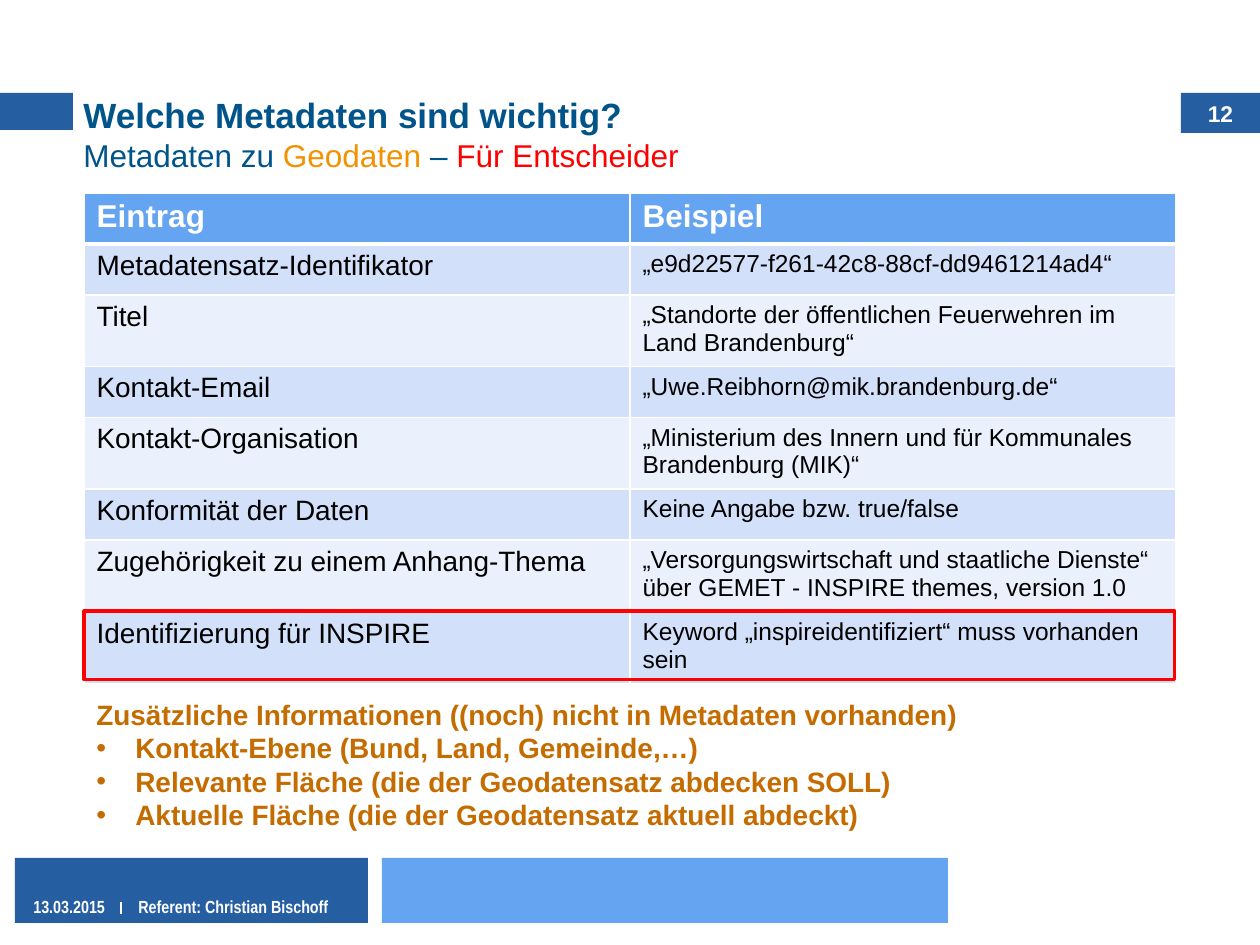
from lxml.etree import SubElement
from pptx import Presentation
from pptx.dml.color import RGBColor
from pptx.enum.shapes import MSO_CONNECTOR, MSO_SHAPE
from pptx.enum.text import MSO_ANCHOR, PP_ALIGN
from pptx.oxml.ns import qn
from pptx.util import Emu, Pt

PX = 914400 // 126
WHITE, BLACK, RED = "FFFFFF", "000000", "FF0000"
NAVY, SKY, TITLE_BLUE = "265EA2", "65A4F1", "00548A"
ORANGE, BROWN = "F39200", "C56C01"
BANDS = ("D3E0FA", "EAF0FC")

BARS = [
    ((382, 858, 566, 65), SKY),
    ((15, 858, 353, 65), NAVY),
    ((0, 93, 73, 37), NAVY),
]
PAGE_NUMBER = "12"
FOOTER = [("13.03.2015", 21, 252), ("Referent: Christian Bischoff", 126, 227)]

TITLE = [
    ("Welche Metadaten sind wichtig?", 20, True, TITLE_BLUE),
    ("\v", 20, True, TITLE_BLUE),
    ("Metadaten zu ", 18, False, TITLE_BLUE),
    ("Geodaten ", 18, False, ORANGE),
    ("– ", 18, False, TITLE_BLUE),
    ("Für Entscheider", 18, False, RED),
]
HEADER = ("Eintrag", "Beispiel")
ENTRIES = [
    ("Metadatensatz-Identifikator", "„e9d22577-f261-42c8-88cf-dd9461214ad4“"),
    ("Titel", "„Standorte der öffentlichen Feuerwehren im Land Brandenburg“"),
    ("Kontakt-Email", "„Uwe.Reibhorn@mik.brandenburg.de“"),
    ("Kontakt-Organisation",
     "„Ministerium des Innern und für Kommunales Brandenburg (MIK)“"),
    ("Konformität der Daten", "Keine Angabe bzw. true/false"),
    ("Zugehörigkeit zu einem Anhang-Thema",
     "„Versorgungswirtschaft und staatliche Dienste“ "
     "über GEMET - INSPIRE themes, version 1.0"),
    ("Identifizierung für INSPIRE",
     "Keyword „inspireidentifiziert“ muss vorhanden sein"),
]
ROW_HEIGHTS = [51, 51, 51, 51, 51, 51, 72, 51]
COLUMN_WIDTH = 546
EXTRA_HEADING = "Zusätzliche Informationen ((noch) nicht in Metadaten vorhanden)"
EXTRA_POINTS = [
    "Kontakt-Ebene (Bund, Land, Gemeinde,…)",
    "Relevante Fläche (die der Geodatensatz abdecken SOLL)",
    "Aktuelle Fläche (die der Geodatensatz aktuell abdeckt)",
]


def px(*lengths):
    return [Emu(length * PX) for length in lengths]


def color(value):
    return RGBColor.from_string(value)


def style(font, size, value, bold=False, name="Arial"):
    font.name, font.size, font.bold = name, Pt(size), bold
    font.color.rgb = color(value)


def add_rectangle(page, place, fill=None, line=None):
    box = page.shapes.add_shape(MSO_SHAPE.RECTANGLE, *px(*place))
    box.shadow.inherit = False
    if fill:
        box.fill.solid()
        box.fill.fore_color.rgb = color(fill)
    else:
        box.fill.background()
    if line:
        box.line.color.rgb = color(line)
        box.line.width = Pt(1.75)
    else:
        box.line.fill.background()
    return box


def add_text_box(page, place):
    frame = page.shapes.add_textbox(*px(*place)).text_frame
    frame.word_wrap = True
    return frame


def set_borders(cell, bottom_width):
    properties = cell._tc.get_or_add_tcPr()
    widths = {"a:lnL": 1, "a:lnR": 1, "a:lnT": 1, "a:lnB": bottom_width}
    for index, (tag, width) in enumerate(widths.items()):
        border = SubElement(properties, qn(tag), w=str(Pt(width)))
        properties.insert(index, border)
        fill = SubElement(border, qn("a:solidFill"))
        SubElement(fill, qn("a:srgbClr"), val=WHITE)


def add_bullet(paragraph):
    properties = paragraph._p.get_or_add_pPr()
    indent = px(39)[0]
    properties.set("marL", str(indent))
    properties.set("indent", str(-indent))
    bullet_color = SubElement(properties, qn("a:buClr"))
    SubElement(bullet_color, qn("a:srgbClr"), val=BROWN)
    SubElement(properties, qn("a:buFont"), typeface="Arial")
    SubElement(properties, qn("a:buChar"), char="•")


def add_frame(page):
    """Add the bars, the page number and the footer line."""
    for place, fill in BARS:
        add_rectangle(page, place, fill)
    number = add_rectangle(page, (1181, 93, 79, 40), NAVY).text_frame
    number.text = PAGE_NUMBER
    number.vertical_anchor = MSO_ANCHOR.MIDDLE
    number.paragraphs[0].alignment = PP_ALIGN.CENTER
    style(number.paragraphs[0].runs[0].font, 13, WHITE, True)
    for text, left, width in FOOTER:
        frame = add_text_box(page, (left, 890, width, 34))
        frame.text = text
        style(frame.paragraphs[0].runs[0].font, 10, WHITE, True, "Arial Narrow")
    divider = page.shapes.add_connector(
        MSO_CONNECTOR.STRAIGHT, *px(121, 902, 121, 914))
    divider.line.color.rgb = color(WHITE)
    divider.line.width = Pt(1)
    SubElement(divider._element.spPr, qn("a:effectLst"))


def add_title(page):
    frame = add_text_box(page, (71, 83, 1113, 101))
    frame.vertical_anchor = MSO_ANCHOR.MIDDLE
    paragraph = frame.paragraphs[0]
    for text, size, bold, value in TITLE:
        if text == "\v":
            paragraph.add_line_break()
            continue
        span = paragraph.add_run()
        span.text = text
        style(span.font, size, value, bold)


def add_entry_table(page):
    rows = [HEADER, *ENTRIES]
    table = page.shapes.add_table(
        len(rows), len(HEADER),
        *px(84, 193, COLUMN_WIDTH * len(HEADER), sum(ROW_HEIGHTS))).table
    for column in table.columns:
        column.width = px(COLUMN_WIDTH)[0]
    for r, texts in enumerate(rows):
        table.rows[r].height = px(ROW_HEIGHTS[r])[0]
        for c, text in enumerate(texts):
            cell = table.cell(r, c)
            cell.text = text
            cell.fill.solid()
            cell.fill.fore_color.rgb = color(BANDS[(r - 1) % 2] if r else SKY)
            set_borders(cell, 1 if r else 3)
            paragraph = cell.text_frame.paragraphs[0]
            paragraph.alignment = PP_ALIGN.LEFT
            font = paragraph.runs[0].font
            if r == 0:
                style(font, 18, WHITE, True)
            else:
                style(font, (16, 14)[c], BLACK)


def add_extra_information(page):
    frame = add_text_box(page, (84, 691, 1091, 149))
    frame.text = "\n".join([EXTRA_HEADING, *EXTRA_POINTS])
    for index, paragraph in enumerate(frame.paragraphs):
        if index:
            add_bullet(paragraph)
        style(paragraph.runs[0].font, 16, BROWN, True)


def main():
    deck = Presentation()
    deck.slide_width, deck.slide_height = px(1260, 945)
    page = deck.slides.add_slide(deck.slide_layouts[6])
    add_frame(page)
    add_title(page)
    add_entry_table(page)
    add_extra_information(page)
    add_rectangle(page, (84, 611, 1091, 69), line=RED)
    deck.save("out.pptx")


if __name__ == "__main__":
    main()
